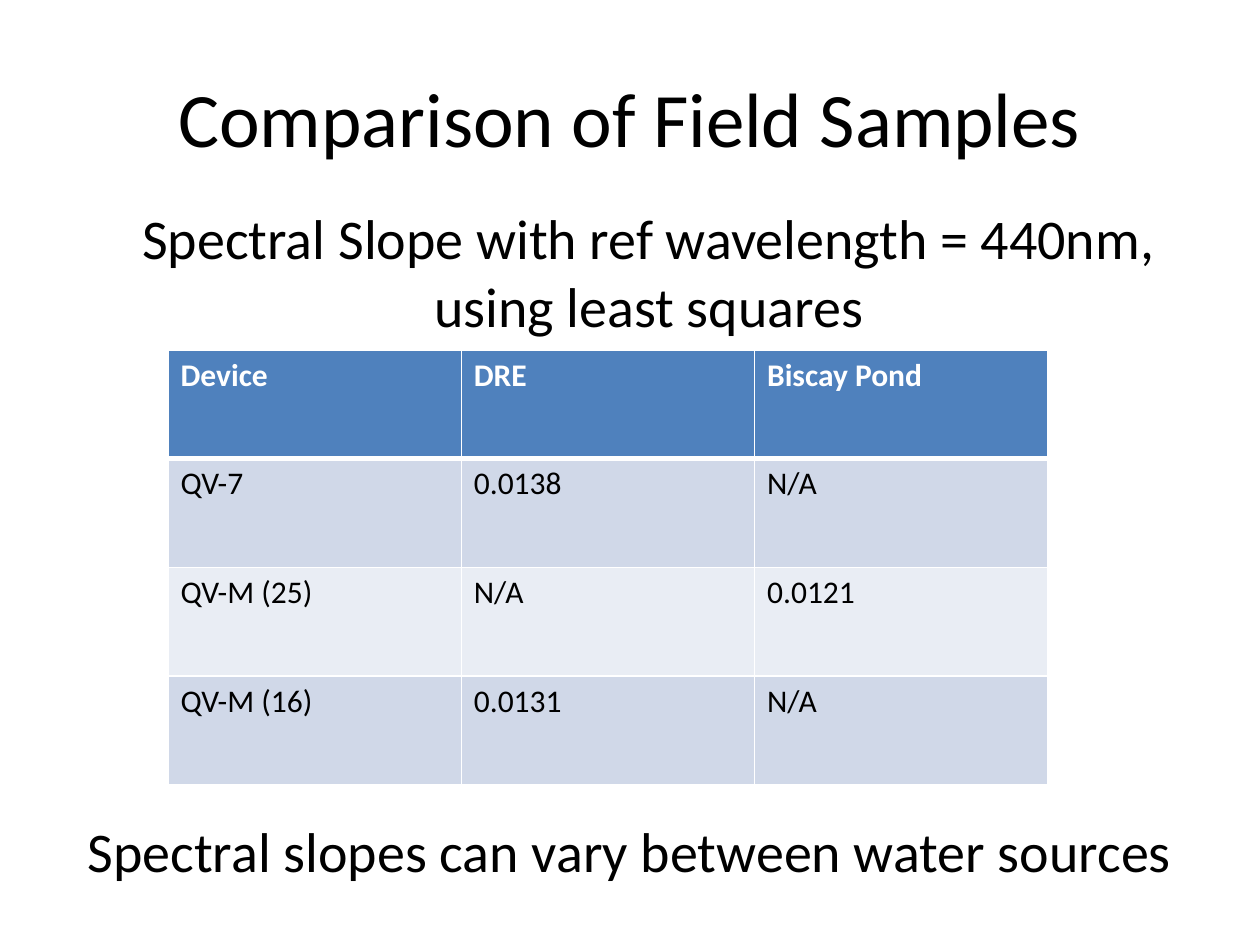
from lxml import etree
from pptx import Presentation
from pptx.dml.color import RGBColor
from pptx.enum.text import MSO_ANCHOR, PP_ALIGN
from pptx.oxml.ns import qn
from pptx.util import Pt

CENTER = PP_ALIGN.CENTER
MIDDLE = MSO_ANCHOR.MIDDLE
TITLE_ONLY = 5

FONT = "Calibri"
BLACK = RGBColor(0x00, 0x00, 0x00)
WHITE = RGBColor(0xFF, 0xFF, 0xFF)
HEADER_BLUE = RGBColor(0x4F, 0x81, 0xBD)
BAND_DARK = RGBColor(0xD0, 0xD8, 0xE8)
BAND_LIGHT = RGBColor(0xE9, 0xED, 0xF4)

SLOPES = [
    ("Device", "DRE", "Biscay Pond"),
    ("QV-7", "0.0138", "N/A"),
    ("QV-M (25)", "N/A", "0.0121"),
    ("QV-M (16)", "0.0131", "N/A"),
]
COLUMN_WIDTH = 167.6
ROW_HEIGHT = 62.1


def write(text_frame, text, size, color=BLACK, bold=False):
    """Put one formatted paragraph in a text frame and return it."""
    text_frame.text = text
    paragraph = text_frame.paragraphs[0]
    font = paragraph.runs[0].font
    font.name, font.size, font.bold = FONT, Pt(size), bold
    font.color.rgb = color
    return paragraph


def add_title(slide, text):
    title = slide.shapes.title
    title.left, title.top = Pt(36), Pt(21.6)
    title.width, title.height = Pt(648), Pt(90)
    title.text_frame.vertical_anchor = MIDDLE
    write(title.text_frame, text, 44).alignment = CENTER


def add_statement(slide, text, left, top, height):
    box = slide.shapes.add_textbox(Pt(left), Pt(top), Pt(648), Pt(height))
    box.text_frame.word_wrap = True
    paragraph = write(box.text_frame, text, 32)
    paragraph.alignment = CENTER
    paragraph.space_before = Pt(6.4)


def set_border(cell, side, width):
    """Draw a white line on one side (lnL, lnR, lnT or lnB) of a cell."""
    properties = cell._tc.get_or_add_tcPr()
    line = etree.Element(qn(f"a:{side}"), w=str(Pt(width)))
    fill = etree.SubElement(line, qn("a:solidFill"))
    etree.SubElement(fill, qn("a:srgbClr"), val=str(WHITE))
    # Border lines come before the cell fill
    properties.insert(len(properties) - 1, line)


def add_slope_table(slide, left, top):
    row_count, column_count = len(SLOPES), len(SLOPES[0])
    table = slide.shapes.add_table(
        row_count, column_count, Pt(left), Pt(top),
        Pt(COLUMN_WIDTH * column_count), Pt(ROW_HEIGHT * row_count)).table
    for column in table.columns:
        column.width = Pt(COLUMN_WIDTH)
    for row_index, values in enumerate(SLOPES):
        table.rows[row_index].height = Pt(ROW_HEIGHT)
        is_header = row_index == 0
        band = BAND_DARK if row_index % 2 else BAND_LIGHT
        for column_index, value in enumerate(values):
            cell = table.cell(row_index, column_index)
            cell.fill.solid()
            cell.fill.fore_color.rgb = HEADER_BLUE if is_header else band
            # A heavier rule separates the header from the values
            set_border(cell, "lnL", 1)
            set_border(cell, "lnR", 1)
            set_border(cell, "lnT", 3 if row_index == 1 else 1)
            set_border(cell, "lnB", 3 if is_header else 1)
            write(cell.text_frame, value, 18,
                  WHITE if is_header else BLACK, is_header)


def main():
    presentation = Presentation()
    presentation.slide_width, presentation.slide_height = Pt(720), Pt(540)
    slide = presentation.slides.add_slide(
        presentation.slide_layouts[TITLE_ONLY])

    # Heading and method
    add_title(slide, "Comparison of Field Samples")
    add_statement(
        slide,
        "Spectral Slope with ref wavelength = 440nm, using least squares",
        46.8, 113, 87)

    # Slopes by device and water source
    add_slope_table(slide, 96, 200)

    # Conclusion
    add_statement(
        slide, "Spectral slopes can vary between water sources", 36, 463, 53)

    presentation.save("out.pptx")


if __name__ == "__main__":
    main()
